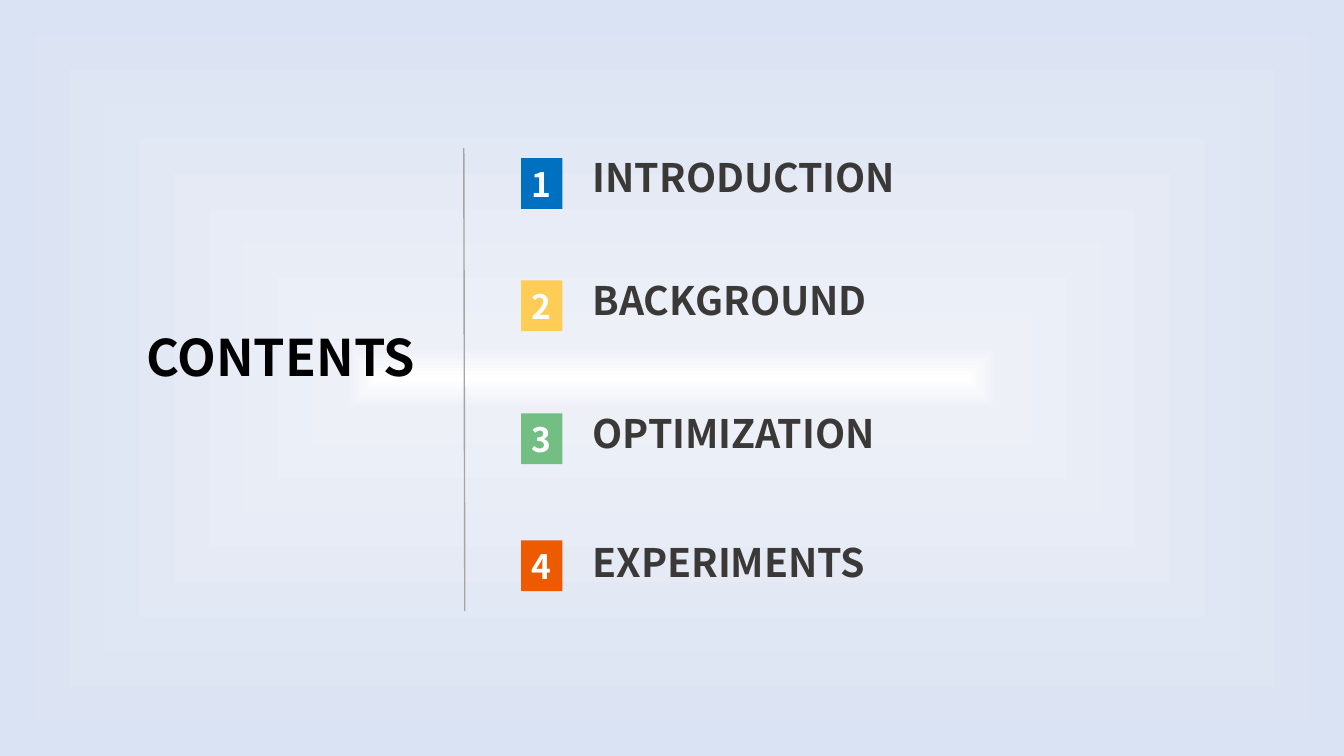
from lxml import etree
from pptx import Presentation
from pptx.dml.color import RGBColor
from pptx.enum.shapes import MSO_CONNECTOR, MSO_SHAPE
from pptx.enum.text import MSO_ANCHOR, MSO_AUTO_SIZE, PP_ALIGN
from pptx.oxml import parse_xml
from pptx.oxml.ns import nsdecls, qn
from pptx.util import Pt

RECTANGLE = MSO_SHAPE.RECTANGLE
STRAIGHT = MSO_CONNECTOR.STRAIGHT
MIDDLE = MSO_ANCHOR.MIDDLE
NO_AUTOSIZE = MSO_AUTO_SIZE.NONE
LEFT, CENTER = PP_ALIGN.LEFT, PP_ALIGN.CENTER

TITLE_ONLY_LAYOUT = 5
TITLE_FONT = "Noto Sans CJK JP"
BODY_FONT = "Noto Sans CJK SC"

# Number, heading, heading top, heading width, badge top, badge colour
SECTIONS = [
    ("1", "INTRODUCTION", 105.8, 245.5, 113, "0070C0"),
    ("2", "BACKGROUND", 193.7, 224.6, 200.2, "FFCC56"),
    ("3", "OPTIMIZATION", 288.7, 233.3, 295.2, "73BE83"),
    ("4", "EXPERIMENTS", 380.9, 218.9, 385.9, "ED5A00"),
]
BACKGROUND_STOPS = [(0, "FAFAFA"), (0, "FFFFFF"), (8, "EDF0F7"), (100, "DAE3F3")]


def color(hex_value):
    return RGBColor.from_string(hex_value)


def place(shape, left, top, width, height):
    shape.left, shape.top = Pt(left), Pt(top)
    shape.width, shape.height = Pt(width), Pt(height)


def write(shape, text, font_name, size, hex_value, align=LEFT):
    """Set one bold line of text, centred vertically in its shape."""
    frame = shape.text_frame
    frame.text = text
    frame.auto_size = NO_AUTOSIZE
    frame.vertical_anchor = MIDDLE
    frame.word_wrap = True
    paragraph = frame.paragraphs[0]
    paragraph.alignment = align
    font = paragraph.runs[0].font
    font.name, font.size, font.bold = font_name, Pt(size), True
    font.color.rgb = color(hex_value)


def set_background(slide):
    """Fill the slide with a gradient that spreads from its centre."""
    stops = "".join(
        f'<a:gs pos="{position * 1000}"><a:srgbClr val="{hex_value}"/></a:gs>'
        for position, hex_value in BACKGROUND_STOPS
    )
    background = parse_xml(
        f'<p:bg {nsdecls("p", "a")}><p:bgPr><a:gradFill rotWithShape="1">'
        f'<a:gsLst>{stops}</a:gsLst><a:path path="shape">'
        '<a:fillToRect l="50000" t="50000" r="50000" b="50000"/></a:path>'
        "</a:gradFill><a:effectLst/></p:bgPr></p:bg>"
    )
    slide.element.cSld.insert(0, background)


def add_title(slide, text):
    title = slide.shapes.title
    place(title, 97.2, 229, 218.2, 51)
    write(title, text, TITLE_FONT, 36, "000000")


def add_section(slide, number, heading, heading_top, heading_width, badge_top, fill):
    """Group a heading with its numbered badge."""
    group = slide.shapes.add_group_shape()
    label = group.shapes.add_textbox(
        Pt(416.2), Pt(heading_top), Pt(heading_width), Pt(41)
    )
    write(label, heading, BODY_FONT, 28, "3B3838")

    badge = group.shapes.add_shape(
        RECTANGLE, Pt(372.2), Pt(badge_top), Pt(29.5), Pt(36.3)
    )
    badge.shadow.inherit = False
    badge.fill.solid()
    badge.fill.fore_color.rgb = color(fill)
    badge.line.fill.background()
    write(badge, number, BODY_FONT, 24, "FFFFFF", CENTER)
    frame = badge.text_frame
    frame.margin_left = frame.margin_right = 0
    frame.margin_top = frame.margin_bottom = 0


def add_divider(slide):
    divider = slide.shapes.add_connector(
        STRAIGHT, Pt(331.3), Pt(105.8), Pt(332), Pt(436.3)
    )
    divider.line.color.rgb = color("A5A5A5")
    divider.line.width = Pt(1)
    etree.SubElement(divider.element.spPr, qn("a:effectLst"))


def main():
    presentation = Presentation()
    presentation.slide_width, presentation.slide_height = Pt(960), Pt(540)
    slide = presentation.slides.add_slide(
        presentation.slide_layouts[TITLE_ONLY_LAYOUT]
    )
    set_background(slide)
    add_title(slide, "CONTENTS")
    for section in SECTIONS:
        add_section(slide, *section)
    add_divider(slide)
    presentation.save("out.pptx")


if __name__ == "__main__":
    main()
